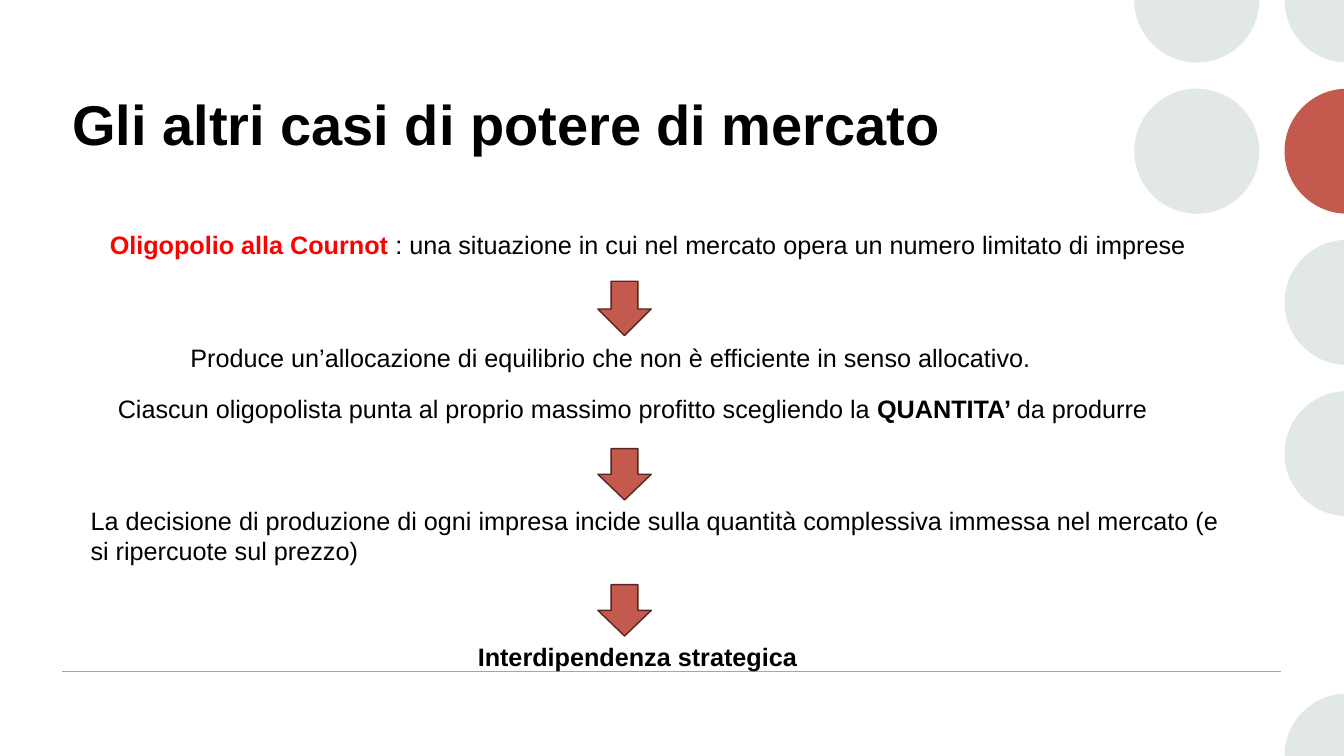
from dataclasses import dataclass
from itertools import pairwise
from math import asin, cos, pi, sin, tan

from lxml import etree
from pptx import Presentation
from pptx.dml.color import RGBColor
from pptx.enum.shapes import MSO_CONNECTOR, MSO_SHAPE
from pptx.enum.text import MSO_ANCHOR, PP_ALIGN
from pptx.oxml.ns import qn
from pptx.util import Emu, Pt

STRAIGHT = MSO_CONNECTOR.STRAIGHT
OVAL = MSO_SHAPE.OVAL
DOWN_ARROW = MSO_SHAPE.DOWN_ARROW
TOP = MSO_ANCHOR.TOP
LEFT = PP_ALIGN.LEFT

EMU_PER_PX = 9144
SLIDE_WIDTH, SLIDE_HEIGHT = 1333, 750
RADIUS = 62
INNER_X, EDGE_X = 1187, 1336
ROW_PITCH = 150
EDGE_ANGLE = asin((EDGE_X - SLIDE_WIDTH) / RADIUS)
EDGE_BOTTOM, EDGE_TOP = pi / 2 + EDGE_ANGLE, 3 * pi / 2 - EDGE_ANGLE
ARROW_LEFT, ARROW_WIDTH = 593, 53


@dataclass(frozen=True)
class Theme:
    """Hold the colours, font and type sizes of the slide."""

    font: str = "Arial"
    title_size: int = 40
    body_size: int = 18
    text: str = "000000"
    term: str = "FF0000"
    accent: str = "C35A4D"
    accent_edge: str = "552722"
    pale: str = "E2E7E8"
    rule: str = "A6A6A6"


THEME = Theme()


def px(length):
    """Turn pixels into EMU."""
    return Emu(round(length * EMU_PER_PX))


def paint(shape, fill, edge=None):
    """Fill a shape and give it an optional outline."""
    shape.shadow.inherit = False
    shape.fill.solid()
    shape.fill.fore_color.rgb = RGBColor.from_string(fill)
    if edge:
        shape.line.color.rgb = RGBColor.from_string(edge)
        shape.line.width = Pt(1)
    else:
        shape.line.fill.background()


def add_circle(slide, x, y, fill):
    """Draw a whole circle around a centre."""
    circle = slide.shapes.add_shape(
        OVAL, px(x - RADIUS), px(y - RADIUS), px(2 * RADIUS), px(2 * RADIUS))
    paint(circle, fill)


def curve_points(x, y, start, end):
    """Return the two handles and the end of a circular Bézier curve."""
    reach = RADIUS * 4 / 3 * tan((end - start) / 4)
    end_x, end_y = x + RADIUS * cos(end), y + RADIUS * sin(end)
    return ((x + RADIUS * cos(start) - reach * sin(start),
             y + RADIUS * sin(start) + reach * cos(start)),
            (end_x + reach * sin(end), end_y - reach * cos(end)),
            (end_x, end_y))


def add_cut_circle(slide, x, y, angles, corners=(), fill=THEME.pale):
    """Draw a circle cut by the slide edge, curved between the given angles."""
    nodes = [(x + RADIUS * cos(angle), y + RADIUS * sin(angle)) for angle in angles]
    points = [(px(left), px(top)) for left, top in (nodes[-1], *corners, *nodes)]
    builder = slide.shapes.build_freeform(*points[0])
    builder.add_line_segments(points[1:], close=True)
    circle = builder.convert_to_shape()
    segments = list(circle.element.iter(qn("a:lnTo")))[1 - len(nodes):]
    for segment, (start, end) in zip(segments, pairwise(angles)):
        segment.tag_name = None
        curve = etree.Element(qn("a:cubicBezTo"))
        for left, top in curve_points(x, y, start, end):
            etree.SubElement(curve, qn("a:pt"), x=str(px(left) - circle.left),
                             y=str(px(top) - circle.top))
        segment.getparent().replace(segment, curve)
    paint(circle, fill)


def add_circle_grid(slide):
    """Draw the decorative circles along the right edge."""
    add_circle(slide, INNER_X, ROW_PITCH, THEME.pale)
    add_cut_circle(slide, INNER_X, 0, (0, pi / 2, pi))
    add_cut_circle(slide, EDGE_X, SLIDE_HEIGHT, (pi, EDGE_TOP),
                   [(SLIDE_WIDTH, SLIDE_HEIGHT)])
    for row, fill in ((3, THEME.pale), (2, THEME.pale), (1, THEME.accent)):
        add_cut_circle(slide, EDGE_X, row * ROW_PITCH,
                       (EDGE_BOTTOM, pi, EDGE_TOP), fill=fill)
    add_cut_circle(slide, EDGE_X, 0, (EDGE_BOTTOM, pi), [(SLIDE_WIDTH, 0)])


def add_rule(slide, left, right, y):
    """Draw the horizontal footer rule."""
    rule = slide.shapes.add_connector(STRAIGHT, px(left), px(y), px(right), px(y))
    rule.line.color.rgb = RGBColor.from_string(THEME.rule)
    rule.line.width = Pt(1)
    etree.SubElement(rule.element.spPr, qn("a:effectLst"))


def add_arrow(slide, top, height):
    """Draw a downward arrow between two statements."""
    arrow = slide.shapes.add_shape(
        DOWN_ARROW, px(ARROW_LEFT), px(top), px(ARROW_WIDTH), px(height))
    paint(arrow, THEME.accent, THEME.accent_edge)


def add_run(paragraph, text, *, size=THEME.body_size, color=THEME.text, bold=False):
    """Add formatted text to a paragraph."""
    run = paragraph.add_run()
    run.text = text
    run.font.name = THEME.font
    run.font.size = Pt(size)
    run.font.bold = bold
    run.font.color.rgb = RGBColor.from_string(color)


def add_text(slide, box, *runs):
    """Place a text box holding one paragraph of (text, format) runs."""
    frame = slide.shapes.add_textbox(*map(px, box)).text_frame
    frame.word_wrap = True
    frame.vertical_anchor = TOP
    paragraph = frame.paragraphs[0]
    paragraph.alignment = LEFT
    for text, style in runs:
        add_run(paragraph, text, **style)


def main():
    """Build and save the slide."""
    presentation = Presentation()
    presentation.slide_width = px(SLIDE_WIDTH)
    presentation.slide_height = px(SLIDE_HEIGHT)
    slide = presentation.slides.add_slide(presentation.slide_layouts[6])

    add_circle_grid(slide)
    add_rule(slide, 62, 1271, 666)

    add_text(slide, (62, 84, 916, 139),
             ("Gli altri casi di potere di mercato",
              {"size": THEME.title_size, "bold": True}))
    add_text(slide, (99, 223, 1128, 40),
             ("Oligopolio alla Cournot ", {"color": THEME.term, "bold": True}),
             (": una situazione in cui nel mercato opera un numero limitato di imprese", {}))
    add_text(slide, (179, 335, 906, 40),
             ("Produce un’allocazione di equilibrio che non è efficiente in senso allocativo.", {}))
    add_text(slide, (107, 385, 1103, 40),
             ("Ciascun oligopolista punta al proprio massimo profitto scegliendo la ", {}),
             ("QUANTITA’ ", {"bold": True}),
             ("da produrre", {}))
    add_text(slide, (80, 496, 1146, 71),
             ("La decisione di produzione di ogni impresa incide sulla quantità complessiva "
              "immessa nel mercato (e si ripercuote sul prezzo)", {}))
    add_text(slide, (464, 631, 352, 40),
             ("Interdipendenza strategica", {"bold": True}))

    for top, height in ((279, 54), (445, 51), (580, 51)):
        add_arrow(slide, top, height)

    presentation.save("out.pptx")


if __name__ == "__main__":
    main()
